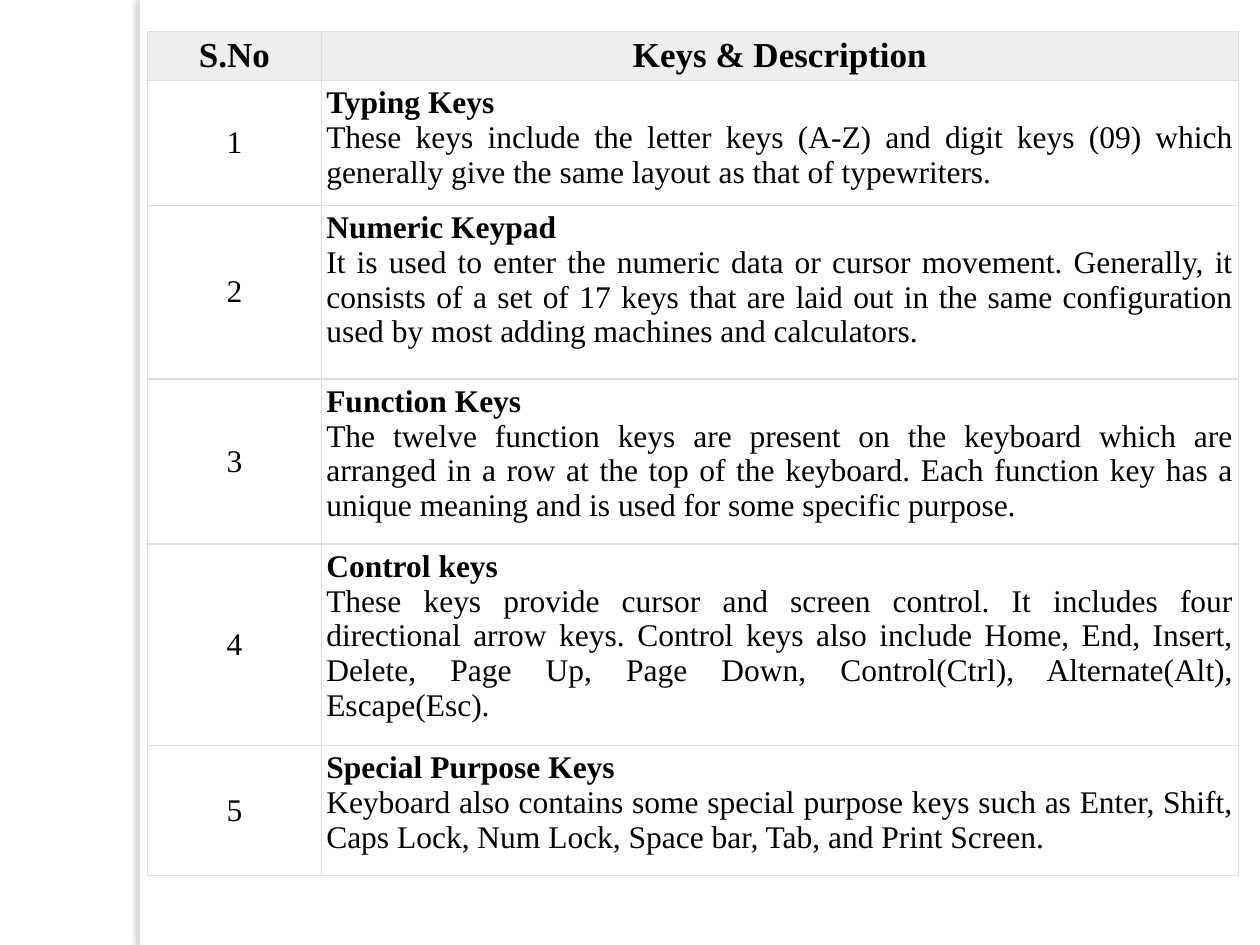
from dataclasses import dataclass
from lxml.etree import SubElement
from pptx import Presentation
from pptx.dml.color import RGBColor as Rgb
from pptx.enum.shapes import MSO_SHAPE as Preset
from pptx.enum.text import MSO_ANCHOR as Anchor, PP_ALIGN as Align
from pptx.oxml.ns import qn
from pptx.util import Inches, Pt


@dataclass(frozen=True)
class Theme:
    font: str = "Times New Roman"
    ink: str = "000000"
    paper: str = "FFFFFF"
    header: str = "EEEEEE"
    rule: str = "DDDDDD"
    shade: str = "736F63"
    header_size: int = 20
    body_size: int = 18
    rule_width: float = 0.75
    inset: float = 0.04


THEME = Theme()
SLIDE_WIDTH, SLIDE_HEIGHT = 10, 7.5
TABLE_LEFT, TABLE_TOP = 1.17, 0.25
COLUMNS = [1.38, 7.28]
ROWS = [0.38, 0.99, 1.38, 1.31, 1.6, 1.03]
HEADINGS = ["S.No", "Keys & Description"]
KEY_GROUPS = [
    ("Typing Keys",
     "These keys include the letter keys (A-Z) and digit keys (09) which "
     "generally give the same layout as that of typewriters."),
    ("Numeric Keypad",
     "It is used to enter the numeric data or cursor movement. Generally, it "
     "consists of a set of 17 keys that are laid out in the same configuration "
     "used by most adding machines and calculators."),
    ("Function Keys",
     "The twelve function keys are present on the keyboard which are arranged "
     "in a row at the top of the keyboard. Each function key has a unique "
     "meaning and is used for some specific purpose."),
    ("Control keys",
     "These keys provide cursor and screen control. It includes four "
     "directional arrow keys. Control keys also include Home, End, Insert, "
     "Delete, Page Up, Page Down, Control(Ctrl), Alternate(Alt), Escape(Esc)."),
    ("Special Purpose Keys",
     "Keyboard also contains some special purpose keys such as Enter, Shift, "
     "Caps Lock, Num Lock, Space bar, Tab, and Print Screen."),
]


def apply(target, formats):
    for attribute, value in formats.items():
        setattr(target, attribute, value)


def add_color(parent, color):
    fill = SubElement(parent, qn("a:solidFill"))
    return SubElement(fill, qn("a:srgbClr"), val=color)


def add_margin_strip(slide):
    strip = slide.shapes.add_shape(
        Preset.RECTANGLE, Inches(1.11), 0, Inches(0.08), Inches(SLIDE_HEIGHT))
    strip.fill.solid()
    strip.fill.fore_color.rgb = Rgb.from_string(THEME.paper)
    strip.line.fill.background()
    strip.shadow.inherit = False
    effects = strip.element.spPr.find(qn("a:effectLst"))
    shadow = SubElement(effects, qn("a:outerShdw"), blurRad=str(Pt(3)),
                        dist=str(Pt(3)), dir=str(180 * 60000),
                        algn="tl", rotWithShape="0")
    shade = SubElement(shadow, qn("a:srgbClr"), val=THEME.shade)
    SubElement(shade, qn("a:alpha"), val="25000")


def rule_cell(cell):
    properties = cell._tc.get_or_add_tcPr()
    for side in ("lnL", "lnR", "lnT", "lnB"):
        edge = SubElement(properties, qn(f"a:{side}"),
                          w=str(Pt(THEME.rule_width)))
        add_color(edge, THEME.rule)


def write_cell(cell, lines, align, size, anchor=Anchor.TOP, fill=None):
    inset = Inches(THEME.inset)
    apply(cell, {"margin_left": inset, "margin_right": inset,
                 "margin_top": inset, "margin_bottom": inset,
                 "vertical_anchor": anchor})
    rule_cell(cell)
    if fill:
        cell.fill.solid()
        cell.fill.fore_color.rgb = Rgb.from_string(fill)
    else:
        cell.fill.background()
    frame = cell.text_frame
    for index, (words, bold) in enumerate(lines):
        paragraph = frame.add_paragraph() if index else frame.paragraphs[0]
        paragraph.alignment = align
        run = paragraph.add_run()
        run.text = words
        apply(run.font, {"name": THEME.font, "size": Pt(size), "bold": bold})
        run.font.color.rgb = Rgb.from_string(THEME.ink)


def add_key_table(slide):
    table = slide.shapes.add_table(
        len(ROWS), len(COLUMNS), Inches(TABLE_LEFT), Inches(TABLE_TOP),
        Inches(sum(COLUMNS)), Inches(sum(ROWS))).table
    apply(table, {"first_row": False, "horz_banding": False})
    for column, width in zip(table.columns, COLUMNS):
        column.width = Inches(width)
    for row, height in zip(table.rows, ROWS):
        row.height = Inches(height)
    for column, heading in enumerate(HEADINGS):
        write_cell(table.cell(0, column), [(heading, True)], Align.CENTER,
                   THEME.header_size, fill=THEME.header)
    for number, (group, description) in enumerate(KEY_GROUPS, 1):
        write_cell(table.cell(number, 0), [(str(number), False)],
                   Align.CENTER, THEME.body_size, Anchor.MIDDLE)
        write_cell(table.cell(number, 1),
                   [(group, True), (description, False)],
                   Align.JUSTIFY, THEME.body_size)


def main():
    deck = Presentation()
    apply(deck, {"slide_width": Inches(SLIDE_WIDTH),
                 "slide_height": Inches(SLIDE_HEIGHT)})
    slide = deck.slides.add_slide(deck.slide_layouts[6])
    add_margin_strip(slide)
    add_key_table(slide)
    deck.save("out.pptx")


if __name__ == "__main__":
    main()
